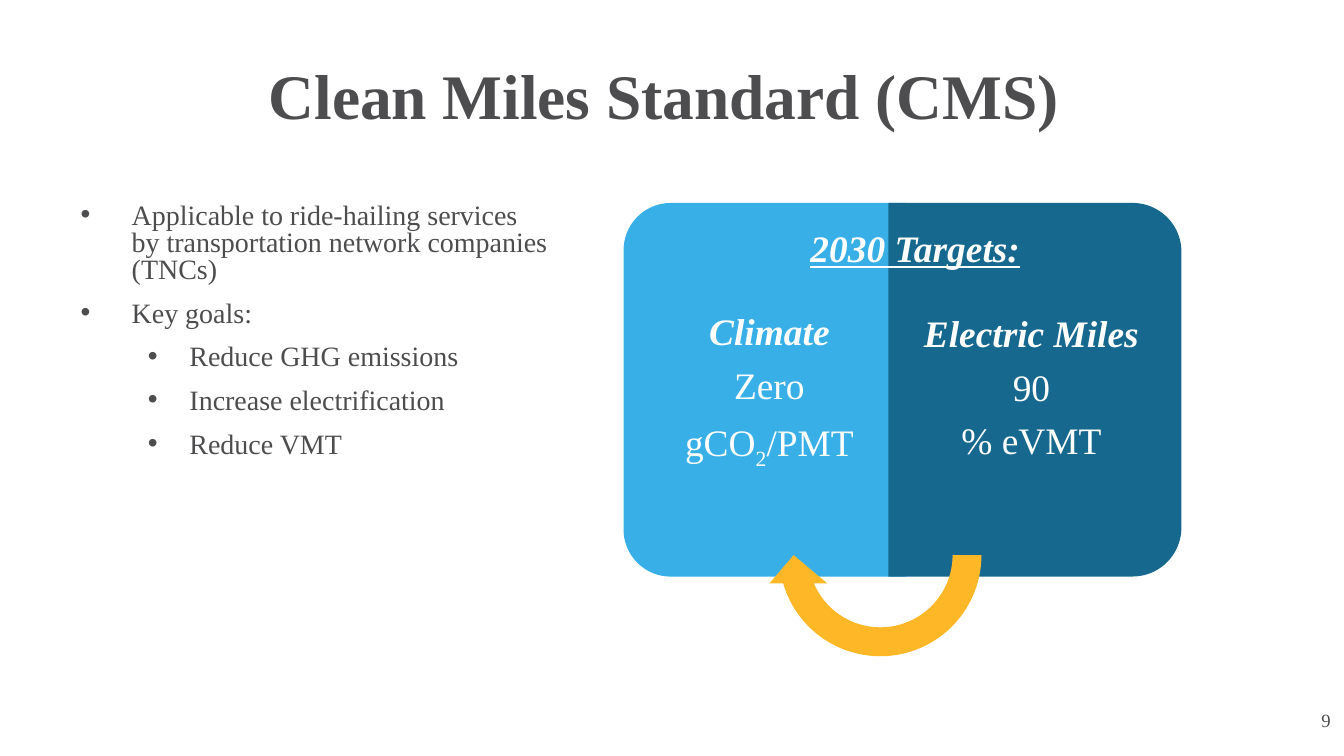
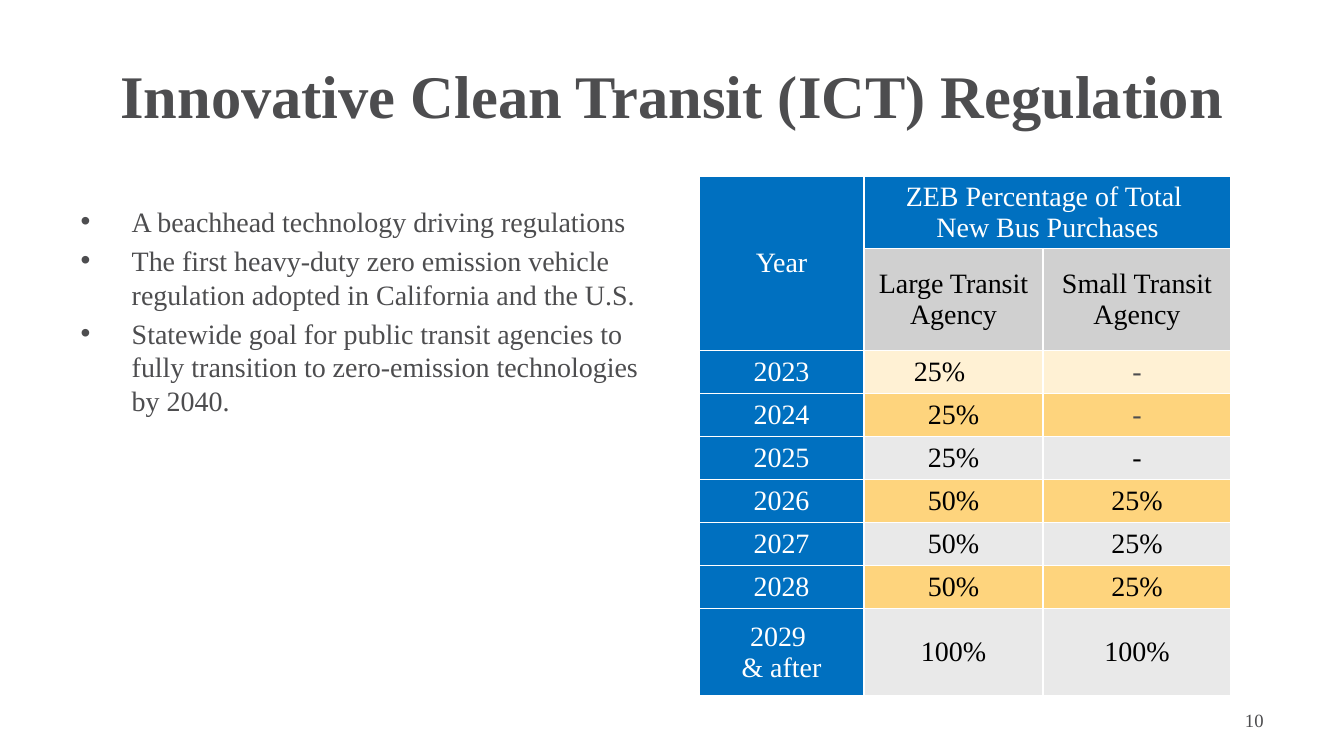
"""Builds two slides on clean transport rules: targets graphic and purchase table."""
from dataclasses import dataclass

import pptx
import pptx.dml.color
import pptx.enum.shapes
import pptx.enum.text
import pptx.oxml
import pptx.oxml.ns
import pptx.util

Inches = pptx.util.Inches
Pt = pptx.util.Pt
RGBColor = pptx.dml.color.RGBColor
PP_ALIGN = pptx.enum.text.PP_ALIGN
MSO_ANCHOR = pptx.enum.text.MSO_ANCHOR
MSO_SHAPE = pptx.enum.shapes.MSO_SHAPE

FONT = "Times New Roman"
GREY = RGBColor(0x4D, 0x4D, 0x4F)
WHITE = RGBColor(0xFF, 0xFF, 0xFF)
BLACK = RGBColor(0, 0, 0)
SKY = RGBColor(0x38, 0xAF, 0xE7)
TEAL = RGBColor(0x17, 0x68, 0x8F)
AMBER = RGBColor(0xFD, 0xB7, 0x27)
HEAD_BLUE = RGBColor(0x00, 0x70, 0xC0)
HEAD_GREY = RGBColor(0xD0, 0xD0, 0xD0)
ROW_CREAM = RGBColor(0xFF, 0xF1, 0xD4)
ROW_GOLD = RGBColor(0xFE, 0xD4, 0x7D)
ROW_GREY = RGBColor(0xE9, 0xE9, 0xE9)


@dataclass(frozen=True)
class Box:
    """A frame in inches."""
    left: float
    top: float
    width: float
    height: float

    def lengths(self) -> tuple:
        """Return the frame as lengths."""
        return tuple(Inches(v) for v in (self.left, self.top, self.width, self.height))


@dataclass(frozen=True)
class Bullet:
    """One list item."""
    text: str
    level: int = 0


@dataclass(frozen=True)
class BulletStyle:
    """Paragraph spacing of a list."""
    line: float
    after: float


@dataclass(frozen=True)
class Target:
    """One half of the targets graphic."""
    half: Box
    rotation: int
    color: RGBColor
    text: Box
    insets: tuple[float, float, float, float]
    heading: str
    lines: list[list[str]]


@dataclass(frozen=True)
class YearRow:
    """Purchase shares for one year."""
    year: str
    large: str
    small: str
    fill: RGBColor
    dash: RGBColor = BLACK
    height: float = 0.32
    shift: float = 0


INDENTS = [(0.38, -0.38), (0.81, -0.31)]
TITLE_BOX = Box(0.5, 0.23, 9, 0.94)
TIGHT = BulletStyle(0.8, 6)
NORMAL = BulletStyle(1, 0)

CMS_BULLETS = [
    Bullet("Applicable to ride-hailing services by transportation network companies (TNCs)"),
    Bullet("Key goals:"),
    Bullet("Reduce GHG emissions", 1),
    Bullet("Increase electrification", 1),
    Bullet("Reduce VMT", 1),
]
ICT_BULLETS = [
    Bullet("A beachhead technology driving regulations"),
    Bullet("The first heavy-duty zero emission vehicle regulation adopted in California and the U.S."),
    Bullet("Statewide goal for public transit agencies to fully transition to "
           "zero-emission technologies by 2040."),
]
TARGETS = [
    Target(Box(4.3, 1.85, 2.78, 2.1), 270, SKY, Box(4.75, 1.61, 1.99, 2.58),
           (0.08, 0.14, 0.12, 0.14), "Climate", [["Zero"], ["gCO", "2", "/PMT"]]),
    Target(Box(6.31, 1.81, 2.78, 2.18), 90, TEAL, Box(6.62, 1.61, 2.07, 2.57),
           (0.12, 0.14, 0.08, 0.14), "Electric Miles", [["90"], ["% eVMT"]]),
]
YEARS = [
    YearRow("2023", "25%", "-", ROW_CREAM, GREY, shift=0.21),
    YearRow("2024", "25%", "-", ROW_GOLD, GREY),
    YearRow("2025", "25%", "-", ROW_GREY),
    YearRow("2026", "50%", "25%", ROW_GOLD),
    YearRow("2027", "50%", "25%", ROW_GREY),
    YearRow("2028", "50%", "25%", ROW_GOLD),
    YearRow("2029 \n& after", "100%", "100%", ROW_GREY, height=0.65),
]


def add_run(p, text: str, size: float, color: RGBColor, bold: bool = False,
            italic: bool = False, underline: bool = False):
    """Add one formatted run."""
    r = p.add_run()
    r.text = text
    f = r.font
    f.name, f.size, f.color.rgb = FONT, Pt(size), color
    f.bold, f.italic, f.underline = bold, italic, underline
    return r


def set_insets(frame, insets: tuple[float, float, float, float]) -> None:
    """Set left, top, right and bottom margins of a text frame or cell."""
    (frame.margin_left, frame.margin_top,
     frame.margin_right, frame.margin_bottom) = (Inches(v) for v in insets)


def place(sp, box: Box) -> None:
    """Move a placeholder to a frame."""
    sp.left, sp.top, sp.width, sp.height = box.lengths()


def add_text_box(shapes, box: Box, anchor: MSO_ANCHOR):
    """Add a wrapping text box and return its text frame."""
    tf = shapes.add_textbox(*box.lengths()).text_frame
    tf.word_wrap = True
    tf.vertical_anchor = anchor
    return tf


def add_solid(shapes, kind: MSO_SHAPE, box: Box, rotation: int, color: RGBColor,
              adjustments: list[float]) -> None:
    """Add a plain filled shape."""
    sp = shapes.add_shape(kind, *box.lengths())
    sp.rotation = rotation
    sp.shadow.inherit = False
    sp.fill.solid()
    sp.fill.fore_color.rgb = color
    sp.line.fill.background()
    for i, value in enumerate(adjustments):
        sp.adjustments[i] = value


def add_bullets(tf, bullets: list[Bullet], style: BulletStyle) -> None:
    """Fill a body placeholder with a bulleted list."""
    for i, item in enumerate(bullets):
        p = tf.paragraphs[0] if i == 0 else tf.add_paragraph()
        p.level = item.level
        left, first = INDENTS[item.level]
        pPr = p._p.get_or_add_pPr()
        pPr.set("marL", str(Inches(left)))
        pPr.set("indent", str(Inches(first)))
        for tag, key, value in (("buFont", "typeface", "Arial"), ("buChar", "char", "•")):
            bu = pptx.oxml.parse_xml(f'<a:{tag} {pptx.oxml.ns.nsdecls("a")} {key}="{value}"/>')
            pPr.append(bu)
        p.line_spacing = style.line
        p.space_before = Pt(3 if i else 0)
        p.space_after = Pt(style.after)
        add_run(p, item.text, 15, GREY)


def add_slide(prs, title: str, size: float, body: Box, bullets: list[Bullet],
              style: BulletStyle, number: str, number_left: float):
    """Add a slide with title, list and page number."""
    s = prs.slides.add_slide(prs.slide_layouts[1])
    sp_body = s.placeholders[1]
    for sp, box, anchor in ((s.shapes.title, TITLE_BOX, MSO_ANCHOR.MIDDLE),
                            (sp_body, body, MSO_ANCHOR.TOP)):
        place(sp, box)
        sp.text_frame.auto_size = pptx.enum.text.MSO_AUTO_SIZE.NONE
        sp.text_frame.word_wrap = True
        sp.text_frame.vertical_anchor = anchor
    p = s.shapes.title.text_frame.paragraphs[0]
    p.alignment = PP_ALIGN.CENTER
    add_run(p, title, size, GREY, bold=True)
    add_bullets(sp_body.text_frame, bullets, style)
    tf = add_text_box(s.shapes, Box(number_left, 5.21, 1, 0.3), MSO_ANCHOR.MIDDLE)
    tf.paragraphs[0].alignment = PP_ALIGN.RIGHT
    add_run(tf.paragraphs[0], number, 10, GREY)
    return s


def add_target(shapes, target: Target) -> None:
    """Draw one half of the targets graphic with its text."""
    add_solid(shapes, MSO_SHAPE.ROUND_2_SAME_RECTANGLE, target.half, target.rotation,
              target.color, [0.167, 0])
    tf = add_text_box(shapes, target.text, MSO_ANCHOR.MIDDLE)
    set_insets(tf, target.insets)
    for i, parts in enumerate([[target.heading], *target.lines]):
        p = tf.paragraphs[0] if i == 0 else tf.add_paragraph()
        p.alignment = PP_ALIGN.CENTER
        p.line_spacing = 0.9
        p.space_after = Pt(7)
        for part in parts:
            r = add_run(p, part, 20, WHITE, bold=i == 0, italic=i == 0)
            if part == "2":
                r._r.get_or_add_rPr().set("baseline", "-25000")


def add_targets(s) -> None:
    """Draw the 2030 targets graphic."""
    shapes = s.shapes.add_group_shape().shapes
    for target in TARGETS:
        add_target(shapes, target)
    add_solid(shapes, MSO_SHAPE.CIRCULAR_ARROW, Box(5.69, 3.27, 1.72, 1.72), 180, AMBER,
              [0.125, 11.423, 204.577, 108, 0.125])
    p = add_text_box(s.shapes, Box(5.29, 1.63, 3.04, 0.44), MSO_ANCHOR.TOP).paragraphs[0]
    p.alignment = PP_ALIGN.CENTER
    add_run(p, "2030 Targets:", 20, WHITE, bold=True, italic=True, underline=True)


def set_cell(cell, paragraphs: list[str], fill: RGBColor, color: RGBColor,
             shift: float = 0) -> None:
    """Fill one table cell; a newline in a paragraph is a line break."""
    tcPr = cell._tc.get_or_add_tcPr()
    for side in ("lnL", "lnR", "lnT", "lnB"):
        tcPr.append(pptx.oxml.parse_xml(
            f'<a:{side} {pptx.oxml.ns.nsdecls("a")} w="{Pt(1)}"><a:solidFill>'
            f'<a:srgbClr val="{WHITE}"/></a:solidFill></a:{side}>'))
    cell.fill.solid()
    cell.fill.fore_color.rgb = fill
    cell.vertical_anchor = MSO_ANCHOR.MIDDLE
    set_insets(cell, (0.08, 0, 0.08 + shift, 0))
    tf = cell.text_frame
    for i, text in enumerate(paragraphs):
        p = tf.paragraphs[0] if i == 0 else tf.add_paragraph()
        p.alignment = PP_ALIGN.CENTER
        for j, line in enumerate(text.split("\n")):
            if j:
                p.add_line_break()
            add_run(p, line, 15, color)


def add_purchase_table(s) -> None:
    """Draw the bus purchase table."""
    heights = [0.54, 0.76] + [row.height for row in YEARS]
    box = Box(5.2, 1.31, 3.95, sum(heights))
    tbl = s.shapes.add_table(len(heights), 3, *box.lengths()).table
    for column, width in zip(tbl.columns, (1.23, 1.33, 1.4)):
        column.width = Inches(width)
    for row, height in zip(tbl.rows, heights):
        row.height = Inches(height)
    tbl.cell(0, 0).merge(tbl.cell(1, 0))
    tbl.cell(0, 1).merge(tbl.cell(0, 2))
    set_cell(tbl.cell(0, 0), ["Year"], HEAD_BLUE, WHITE)
    set_cell(tbl.cell(0, 1), ["ZEB Percentage of Total ", "New Bus Purchases"], HEAD_BLUE, WHITE)
    for c, agency in enumerate(("Large Transit Agency", "Small Transit Agency"), 1):
        set_cell(tbl.cell(1, c), [agency], HEAD_GREY, BLACK)
    for i, row in enumerate(YEARS, 2):
        set_cell(tbl.cell(i, 0), [row.year], HEAD_BLUE, WHITE)
        set_cell(tbl.cell(i, 1), [row.large], row.fill, BLACK, row.shift)
        set_cell(tbl.cell(i, 2), [row.small], row.fill, row.dash)


def main() -> None:
    """Build and save the presentation."""
    prs = pptx.Presentation()
    prs.slide_width = Inches(10)
    prs.slide_height = Inches(10 * 9 / 16)
    cms = add_slide(prs, "Clean Miles Standard (CMS) ", 34, Box(0.5, 1.47, 3.69, 2.27),
                    CMS_BULLETS, TIGHT, "9", 9)
    add_targets(cms)
    ict = add_slide(prs, "Innovative Clean Transit (ICT) Regulation", 32.4,
                    Box(0.5, 1.47, 4.5, 3.71), ICT_BULLETS, NORMAL, "10", 8.5)
    add_purchase_table(ict)
    prs.save("out.pptx")


if __name__ == "__main__":
    main()
